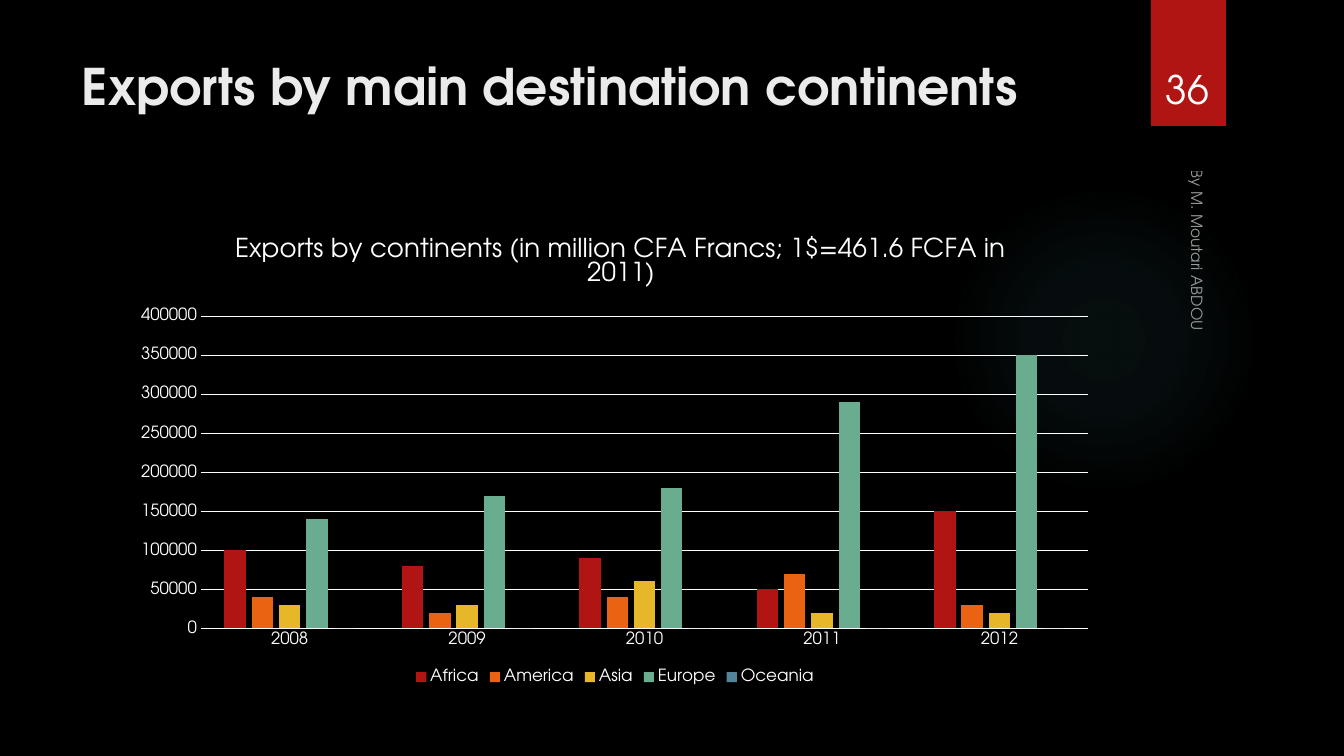
from lxml import etree
from pptx import Presentation
from pptx.chart.data import CategoryChartData
from pptx.dml.color import RGBColor
from pptx.enum.chart import XL_CHART_TYPE, XL_LEGEND_POSITION, XL_TICK_MARK
from pptx.enum.shapes import MSO_SHAPE
from pptx.enum.text import MSO_ANCHOR, PP_ALIGN
from pptx.oxml import parse_xml
from pptx.oxml.ns import nsdecls, qn
from pptx.util import Pt

COLUMN = XL_CHART_TYPE.COLUMN_CLUSTERED
BELOW = XL_LEGEND_POSITION.BOTTOM
NO_TICK = XL_TICK_MARK.NONE
OVAL, RECT = MSO_SHAPE.OVAL, MSO_SHAPE.RECTANGLE
TOP, BOTTOM = MSO_ANCHOR.TOP, MSO_ANCHOR.BOTTOM
LEFT, CENTER = PP_ALIGN.LEFT, PP_ALIGN.CENTER

FONT = "TeX Gyre Adventor"
SCALE = 914400 / 100.8
COLORS = {
    "back": "000000", "white": "FFFFFF", "title": "EBEBEB",
    "glow": "50B9C1", "red": "B01513", "orange": "EA6312",
    "yellow": "E6B729", "green": "6AAC90", "blue": "54849A",
}
YEARS = ["2008", "2009", "2010", "2011", "2012"]
EXPORTS = [
    ("Africa", "red", [100000, 80000, 90000, 50000, 150000]),
    ("America", "orange", [40000, 20000, 40000, 70000, 30000]),
    ("Asia", "yellow", [30000, 30000, 60000, 20000, 20000]),
    ("Europe", "green", [140000, 170000, 180000, 290000, 350000]),
    ("Oceania", "blue", [0, 0, 0, 0, 0]),
]


def px(*sizes):
    return [round(size * SCALE) for size in sizes]


def rgb(name):
    return RGBColor.from_string(COLORS[name])


def layout(**parts):
    """Manual chart layout, in fractions of the chart frame."""
    tags = "".join(f'<c:{tag} val="{val}"/>' for tag, val in parts.items())
    return parse_xml(f'<c:layout {nsdecls("c")}><c:manualLayout>{tags}'
                     '</c:manualLayout></c:layout>')


class Deck:
    def __init__(self, wide, high):
        self.prs = Presentation()
        self.prs.slide_width, self.prs.slide_height = px(wide, high)
        self.slide = self.prs.slides.add_slide(self.prs.slide_layouts[6])
        fill = self.slide.background.fill
        fill.solid()
        fill.fore_color.rgb = rgb("back")

    def style(self, font, size, color="white", bold=False):
        font.name, font.size, font.bold = FONT, Pt(size), bold
        font.color.rgb = rgb(color)

    def shape(self, kind, box, color):
        shape = self.slide.shapes.add_shape(kind, *px(*box))
        shape.shadow.inherit = False
        shape.line.fill.background()
        shape.fill.solid()
        shape.fill.fore_color.rgb = rgb(color)
        return shape

    def glow(self, box, color, stops):
        """Circle fading outward; stops are (place, opacity) in percent."""
        shape = self.shape(OVAL, box, color)
        marks = "".join(
            f'<a:gs pos="{place * 1000}"><a:srgbClr val="{COLORS[color]}">'
            f'<a:alpha val="{alpha * 1000}"/></a:srgbClr></a:gs>'
            for place, alpha in stops)
        grad = parse_xml(
            f'<a:gradFill {nsdecls("a")}><a:gsLst>{marks}</a:gsLst>'
            '<a:path path="circle"><a:fillToRect l="50000" t="50000" '
            'r="50000" b="50000"/></a:path></a:gradFill>')
        props = shape.fill._xPr
        props.replace(props.find(qn("a:solidFill")), grad)

    def text(self, box, words, size, color="white", bold=False,
             align=LEFT, anchor=TOP, turn=0, alpha=100):
        shape = self.slide.shapes.add_textbox(*px(*box))
        shape.rotation = turn
        frame = shape.text_frame
        frame.word_wrap = True
        frame.vertical_anchor = anchor
        frame.text = words
        para = frame.paragraphs[0]
        para.alignment = align
        run = para.runs[0]
        self.style(run.font, size, color, bold)
        if alpha < 100:
            tone = run._r.rPr.find(".//" + qn("a:srgbClr"))
            etree.SubElement(tone, qn("a:alpha"), val=str(alpha * 1000))

    def axis(self, axis):
        axis.major_tick_mark = axis.minor_tick_mark = NO_TICK
        self.style(axis.tick_labels.font, 12)

    def rule(self, line):
        line.color.rgb = rgb("white")
        line.width = Pt(0.75)

    def chart(self, box, title, cats, rows):
        data = CategoryChartData()
        data.categories = cats
        for name, _, vals in rows:
            data.add_series(name, vals)
        chart = self.slide.shapes.add_chart(COLUMN, *px(*box), data).chart
        self.style(chart.font, 10)

        chart.has_title = True
        head = chart.chart_title
        head.text_frame.text = title
        self.style(head.text_frame.paragraphs[0].runs[0].font, 18.6)
        head.include_in_layout = False

        chart.has_legend = True
        chart.legend.position = BELOW
        chart.legend.include_in_layout = False
        self.style(chart.legend.font, 12)

        self.axis(chart.category_axis)
        self.rule(chart.category_axis.format.line)
        value = chart.value_axis
        self.axis(value)
        value.minimum_scale, value.maximum_scale = 0, 400000
        value.major_unit = 50000
        value.format.line.fill.background()
        self.rule(value.major_gridlines.format.line)

        plot = chart.plots[0]
        plot.vary_by_categories = False
        plot.gap_width, plot.overlap = 219, -27
        for series, (_, color, _) in zip(plot.series, rows):
            series.format.fill.solid()
            series.format.fill.fore_color.rgb = rgb(color)

        self.place(head._element, 1, xMode="edge", yMode="edge",
                   x=0.11, y=0.01)
        self.place(chart._chartSpace.chart.plotArea, 0, layoutTarget="inner",
                   xMode="edge", yMode="edge", x=0.08, y=0.195, w=0.9, h=0.674)

    def place(self, part, spot, **parts):
        """Give a chart part its layout, as its child number spot."""
        for old in part.findall(qn("c:layout")):
            part.remove(old)
        part.insert(spot, layout(**parts))


def main():
    deck = Deck(1344, 756)
    deck.glow((949, 185, 310, 310), "glow", [(0, 7), (36, 6), (69, 0)])
    deck.shape(RECT, (1151, 0, 75, 126), "red")
    deck.text((72, 50, 1037, 154), "Exports by main destination continents",
              36, "title", bold=True)
    deck.chart((122, 226, 986, 463),
               "Exports by continents (in million CFA Francs; "
               "1$=461.6 FCFA in 2011)", YEARS, EXPORTS)
    deck.text((987, 356, 425, 33), "By M. Moutari ABDOU", 11,
              anchor=BOTTOM, turn=90, alpha=60)
    deck.text((1141, 32, 93, 85), "36", 28, align=CENTER, anchor=BOTTOM)
    deck.prs.save("out.pptx")


if __name__ == "__main__":
    main()
